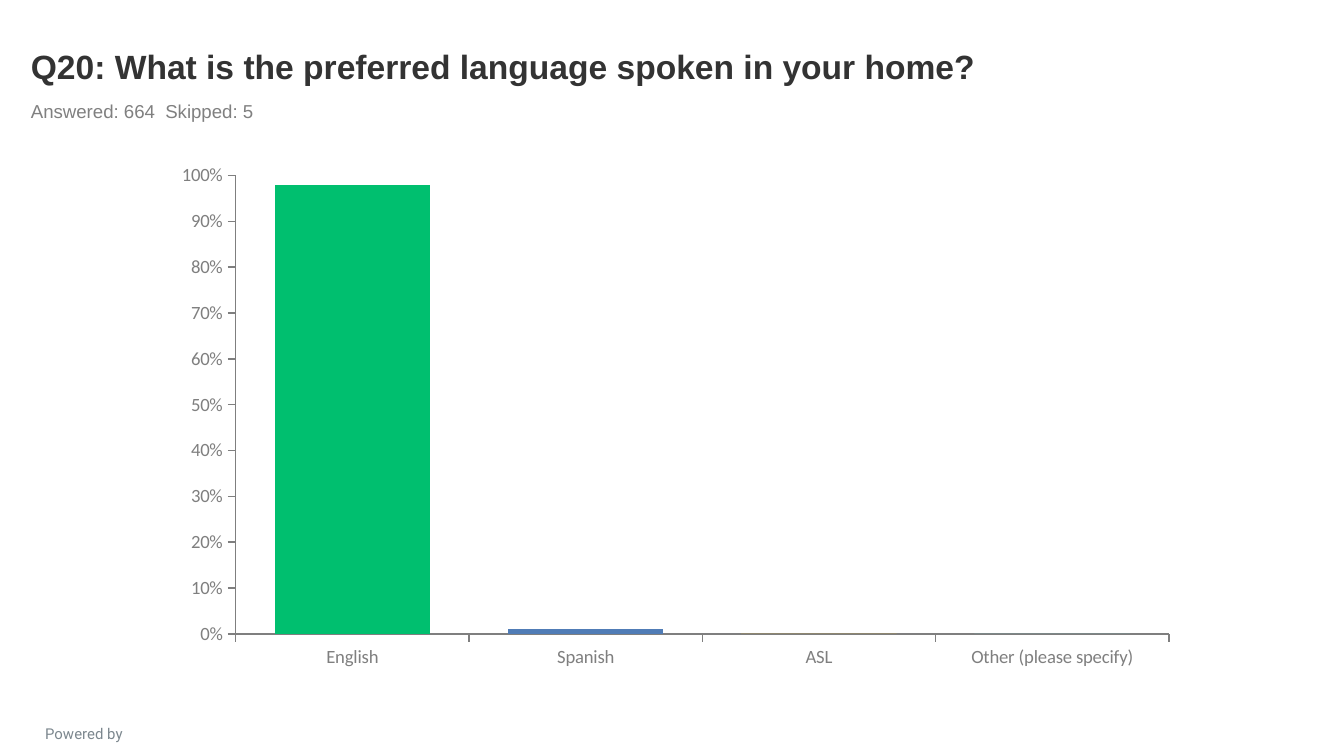
from lxml import etree
from pptx import Presentation
from pptx.chart.data import CategoryChartData
from pptx.dml.color import RGBColor
from pptx.enum.chart import XL_CHART_TYPE, XL_TICK_LABEL_POSITION, XL_TICK_MARK
from pptx.enum.text import MSO_ANCHOR, PP_ALIGN
from pptx.oxml.ns import qn
from pptx.util import Inches, Pt

DARK = RGBColor(0x33, 0x33, 0x33)
GRAY = RGBColor(0x80, 0x80, 0x80)
AXIS_GRAY = RGBColor(0x7F, 0x7F, 0x7F)
FOOTER_GRAY = RGBColor(0x7C, 0x87, 0x8E)
GREEN = RGBColor(0x00, 0xBF, 0x6F)
BLUE = RGBColor(0x50, 0x7C, 0xB6)
YELLOW = RGBColor(0xF9, 0xBE, 0x00)
TEAL = RGBColor(0x6B, 0xC8, 0xCD)

# answer, share, bar colour
ANSWERS = [
    ("English", 0.98, GREEN),
    ("Spanish", 0.01, BLUE),
    ("ASL", 0, YELLOW),
    ("Other (please specify)", 0, TEAL),
]


def write_text(sp, box, text, size, font, color, bold=False,
               align=PP_ALIGN.LEFT, anchor=MSO_ANCHOR.TOP):
    sp.left, sp.top, sp.width, sp.height = (Inches(v) for v in box)
    tf = sp.text_frame
    tf.word_wrap = True
    tf.vertical_anchor = anchor
    p = tf.paragraphs[0]
    p.alignment = align
    p.space_before = Pt(0)
    r = p.add_run()
    r.text = text
    r.font.size, r.font.name, r.font.bold = Pt(size), font, bold
    r.font.color.rgb = color
    return p


def add_heading(s, left, top, width):
    # Question
    write_text(s.shapes.title, (left, top, width, 0.6),
               "Q20: What is the preferred language spoken in your home?",
               18, "Arial", DARK, bold=True, anchor=MSO_ANCHOR.BOTTOM)
    # Response counts, the second one set at a tab stop
    p = write_text(s.placeholders[1], (left, top + 0.6, width, 0.26),
                   "Answered: 664\tSkipped: 5", 10, "Arial", GRAY)
    pPr = p._p.get_or_add_pPr()
    pPr.set("marL", "0")
    pPr.set("indent", "0")
    etree.SubElement(pPr, qn("a:buNone"))
    tabs = etree.SubElement(pPr, qn("a:tabLst"))
    etree.SubElement(tabs, qn("a:tab"), pos=str(Inches(1.08)), algn="l")


def format_axis(axis):
    axis.has_major_gridlines = False
    axis.major_tick_mark = XL_TICK_MARK.OUTSIDE
    axis.minor_tick_mark = XL_TICK_MARK.NONE
    axis.tick_labels.font.size = Pt(10)
    axis.tick_labels.font.color.rgb = AXIS_GRAY
    axis.format.line.color.rgb = AXIS_GRAY
    axis.format.line.width = Pt(0.75)


def add_answer_chart(s, left, top, width, height):
    data = CategoryChartData(number_format="0%")
    data.categories = [name for name, _, _ in ANSWERS]
    data.add_series("Series 1", [share for _, share, _ in ANSWERS])
    box = (Inches(v) for v in (left, top, width, height))
    chart = s.shapes.add_chart(XL_CHART_TYPE.COLUMN_CLUSTERED, *box, data).chart
    chart.has_legend = False
    chart.has_title = False
    chart.font.size, chart.font.name = Pt(18), "Calibri"
    chart.font.color.rgb = DARK

    # Axes
    format_axis(chart.category_axis)
    chart.category_axis.tick_label_position = XL_TICK_LABEL_POSITION.LOW
    axis = chart.value_axis
    format_axis(axis)
    axis.minimum_scale, axis.maximum_scale, axis.major_unit = 0, 1, 0.1
    axis.tick_labels.number_format = "0%"
    axis.tick_labels.number_format_is_linked = False

    # Bars
    plot = chart.plots[0]
    plot.gap_width, plot.overlap = 50, 100
    plot.vary_by_categories = False
    series = plot.series[0]
    series.invert_if_negative = False
    series.format.fill.solid()
    series.format.fill.fore_color.rgb = GREEN
    for i, (_, _, color) in enumerate(ANSWERS):
        fill = series.points[i].format.fill
        fill.solid()
        fill.fore_color.rgb = color


def add_footer(s, left, top, width, height):
    sp = s.shapes.add_textbox(0, 0, 0, 0)
    write_text(sp, (left, top, width, height), "Powered by",
               8, "Roboto", FOOTER_GRAY, align=PP_ALIGN.CENTER)


def main():
    prs = Presentation()
    # 16:9 slide
    prs.slide_width = Inches(10)
    prs.slide_height = prs.slide_width * 9 // 16
    s = prs.slides.add_slide(prs.slide_layouts[1])
    add_footer(s, 0.05, 5.34, 1.15, 0.18)
    add_heading(s, 0.13, 0.09, 9)
    add_answer_chart(s, 1.2, 1.15, 7.65, 3.9)
    prs.save("out.pptx")


if __name__ == "__main__":
    main()
